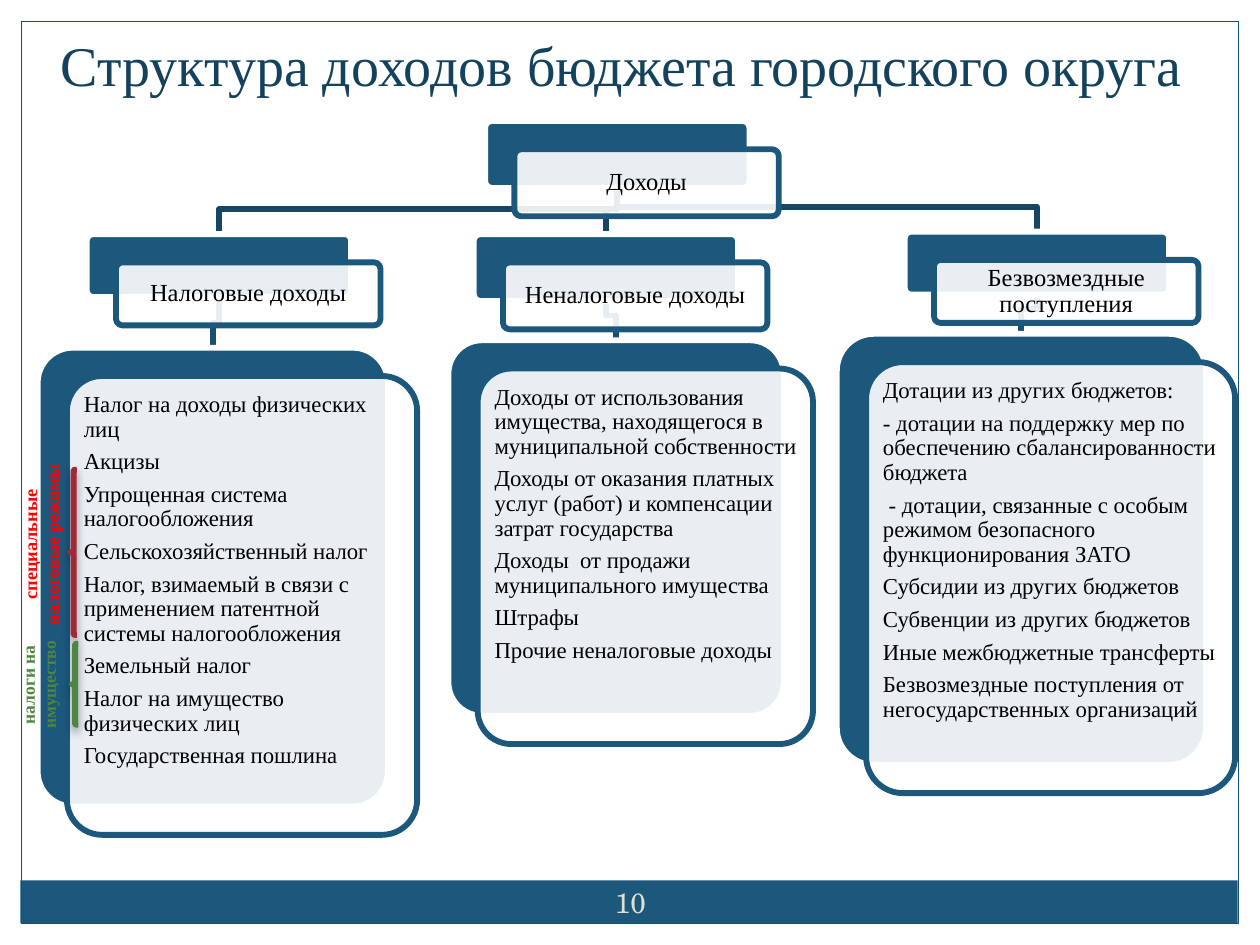
from dataclasses import dataclass
from typing import Optional

from lxml.etree import SubElement
from pptx import Presentation
from pptx.dml.color import RGBColor
from pptx.enum.shapes import MSO_SHAPE
from pptx.enum.text import MSO_ANCHOR, MSO_AUTO_SIZE, PP_ALIGN
from pptx.oxml.ns import qn
from pptx.shapes.autoshape import Shape
from pptx.slide import Slide
from pptx.text.text import TextFrame
from pptx.util import Cm, Pt

BLUE = RGBColor(0x1B, 0x58, 0x7C)
FRAME = RGBColor(0x18, 0x4E, 0x6D)
NAVY = RGBColor(0x14, 0x42, 0x5D)
UPPER = RGBColor(0x16, 0x46, 0x63)
LOWER = RGBColor(0x19, 0x50, 0x71)
CREAM = RGBColor(0xE3, 0xDE, 0xD1)
WHITE = RGBColor(0xFF, 0xFF, 0xFF)
BLACK = RGBColor(0, 0, 0)
RED = RGBColor(0xFF, 0, 0)
WINE = RGBColor(0x9F, 0x29, 0x36)
GREEN = RGBColor(0x4E, 0x85, 0x42)

SERIF = "Times New Roman"
STROKE = 3.35
SHIFT_X, SHIFT_Y = 0.59, 0.57
BEND = 0.5
PAD = 0.21


@dataclass
class Box:
    x: float
    y: float
    w: float
    h: float

    def mid(self) -> float:
        return self.x + self.w / 2

    def end(self) -> float:
        return self.y + self.h

    def place(self) -> tuple:
        return Cm(self.x), Cm(self.y), Cm(self.w), Cm(self.h)


@dataclass
class Branch:
    name: str
    head: Box
    panel: Box
    slot: int
    items: list[str]


@dataclass
class Mark:
    text: str
    size: float
    ink: RGBColor
    label: Box
    brace: Box
    line: RGBColor


ROOT = Box(9.78, 2.44, 5.33, 1.35)
BRANCHES = [
    Branch("Налоговые доходы", Box(1.75, 4.72, 5.33, 1.27), Box(0.76, 7.01, 7.06, 9.25), 2, [
        "Налог на доходы физических лиц",
        "Акцизы",
        "Упрощенная система налогообложения",
        "Сельскохозяйственный налог",
        "Налог, взимаемый в связи с применением патентной системы налогообложения",
        "Земельный налог",
        "Налог на имущество физических лиц",
        "Государственная пошлина",
    ]),
    Branch("Неналоговые доходы", Box(9.55, 4.72, 5.33, 1.35), Box(9.04, 6.86, 6.76, 7.57), 4, [
        "Доходы от использования имущества, находящегося в муниципальной собственности",
        "Доходы от оказания платных услуг (работ) и компенсации затрат государства",
        "Доходы  от продажи муниципального имущества",
        "Штрафы",
        "Прочие неналоговые доходы",
    ]),
    Branch("Безвозмездные поступления", Box(18.24, 4.67, 5.33, 1.27), Box(16.87, 6.73, 7.44, 8.69), 1, [
        "Дотации из других бюджетов:",
        "- дотации на поддержку мер по обеспечению сбалансированности бюджета",
        " - дотации, связанные с особым режимом безопасного функционирования ЗАТО",
        "Субсидии из других бюджетов",
        "Субвенции из других бюджетов",
        "Иные межбюджетные трансферты",
        "Безвозмездные поступления от негосударственных организаций",
    ]),
]
MARKS = [
    Mark("специальные налоговые режимы", 10.5, RED,
         Box(0.18, 9.07, 1.42, 3.81), Box(1.42, 9.47, 0.13, 3.33), WINE),
    Mark("налоги на имущество", 10, GREEN,
         Box(0.15, 12.6, 1.37, 2.41), Box(1.45, 12.98, 0.13, 1.63), GREEN),
]


def write(frame: TextFrame, lines: list[str], size: float, ink: RGBColor, *,
          align: PP_ALIGN = PP_ALIGN.CENTER, anchor: MSO_ANCHOR = MSO_ANCHOR.MIDDLE,
          font: str = SERIF, bold: bool = False, pitch: float = 1.0,
          after: float = 0, inset: float = 0.13) -> None:
    frame.word_wrap = True
    frame.auto_size = MSO_AUTO_SIZE.NONE
    frame.vertical_anchor = anchor
    frame.margin_left = frame.margin_right = Cm(inset)
    frame.margin_top = frame.margin_bottom = Cm(inset)
    for i, line in enumerate(lines):
        para = frame.add_paragraph() if i else frame.paragraphs[0]
        para.alignment = align
        para.line_spacing = pitch
        para.space_before = Pt(0)
        para.space_after = Pt(after)
        run = para.add_run()
        run.text = line
        run.font.name = font
        run.font.size = Pt(size)
        run.font.bold = bold
        run.font.color.rgb = ink


def draw(slide: Slide, kind: MSO_SHAPE, box: Box, fill: Optional[RGBColor],
         line: Optional[RGBColor], width: float = STROKE) -> Shape:
    shape = slide.shapes.add_shape(kind, *box.place())
    shape.shadow.inherit = False
    if fill is None:
        shape.fill.background()
    else:
        shape.fill.solid()
        shape.fill.fore_color.rgb = fill
    if line is None:
        shape.line.fill.background()
    else:
        shape.line.color.rgb = line
        shape.line.width = Pt(width)
    return shape


def card(slide: Slide, back: Box) -> tuple[Shape, Box]:
    front = Box(back.x + SHIFT_X, back.y + SHIFT_Y, back.w, back.h)
    rear = draw(slide, MSO_SHAPE.ROUNDED_RECTANGLE, back, BLUE, WHITE)
    face = draw(slide, MSO_SHAPE.ROUNDED_RECTANGLE, front, WHITE, BLUE)
    rear.adjustments[0] = face.adjustments[0] = 0.1
    tint = face._element.spPr.find(qn("a:solidFill"))[0]
    SubElement(tint, qn("a:alpha"), val="90000")
    return face, front


def head(slide: Slide, back: Box, text: str) -> None:
    face, _ = card(slide, back)
    write(face.text_frame, [text], 14, BLACK, pitch=0.9, inset=0.15)


def link(slide: Slide, top: Box, low: Box, ink: RGBColor) -> None:
    turn = low.y - BEND
    pen = slide.shapes.build_freeform(Cm(top.mid()), Cm(top.end()))
    pen.add_line_segments([(Cm(x), Cm(y)) for x, y in (
        (top.mid(), turn), (low.mid(), turn), (low.mid(), low.y))], close=False)
    shape = pen.convert_to_shape()
    shape.shadow.inherit = False
    shape.fill.background()
    shape.line.color.rgb = ink
    shape.line.width = Pt(STROKE)


def panel(slide: Slide, branch: Branch) -> None:
    _, front = card(slide, branch.panel)
    body = slide.placeholders[branch.slot]
    slide.shapes._spTree.append(body._element)
    body.left, body.top, body.width, body.height = Box(
        front.x + PAD, front.y + PAD, front.w - 2 * PAD, front.h - 2 * PAD).place()
    write(body.text_frame, branch.items, 13, BLACK, align=PP_ALIGN.LEFT,
          anchor=MSO_ANCHOR.TOP, pitch=0.9, after=4.55)
    for para in body.text_frame.paragraphs:
        props = para._p.get_or_add_pPr()
        props.set("marL", "0")
        props.set("indent", "0")
        SubElement(props, qn("a:buNone"))


def label(slide: Slide, mark: Mark) -> None:
    brace = draw(slide, MSO_SHAPE.LEFT_BRACE, mark.brace, None, mark.line)
    glow = SubElement(brace._element.spPr.find(qn("a:effectLst")), qn("a:outerShdw"),
                      blurRad=str(Pt(5.2)), dist=str(Pt(3)), dir="5400000", rotWithShape="0")
    shade = SubElement(glow, qn("a:srgbClr"), val=str(BLACK))
    SubElement(shade, qn("a:alpha"), val="40000")
    frame = slide.shapes.add_textbox(*mark.label.place()).text_frame
    frame._txBody.bodyPr.set("vert", "vert270")
    write(frame, [mark.text], mark.size, mark.ink, bold=True,
          anchor=MSO_ANCHOR.TOP, inset=0.2)


def main() -> None:
    deck = Presentation()
    deck.slide_width, deck.slide_height = Cm(25.4), Cm(19.05)
    slide = deck.slides.add_slide(deck.slide_layouts[4])
    spare = slide.placeholders[3]._element
    spare.getparent().remove(spare)

    title = slide.shapes.title
    title.left, title.top, title.width, title.height = Box(0.33, 0.48, 24.41, 1.63).place()
    write(title.text_frame, ["Структура доходов бюджета городского округа"], 32, NAVY)

    draw(slide, MSO_SHAPE.RECTANGLE, Box(0.41, 17.75, 24.54, 0.86), BLUE, None)
    draw(slide, MSO_SHAPE.RECTANGLE, Box(0.43, 0.43, 24.54, 18.19), None, FRAME, 0.75)
    page = slide.shapes.add_textbox(*Box(11.86, 17.58, 1.7, 1.22).place())
    write(page.text_frame, ["10"], 16, CREAM, font="TeX Gyre Schola")

    for branch in BRANCHES:
        link(slide, branch.head, branch.panel, LOWER)
        link(slide, ROOT, branch.head, UPPER)
    head(slide, ROOT, "Доходы")
    for branch in BRANCHES:
        head(slide, branch.head, branch.name)
        panel(slide, branch)
    for mark in MARKS:
        label(slide, mark)
    deck.save("out.pptx")


if __name__ == "__main__":
    main()
